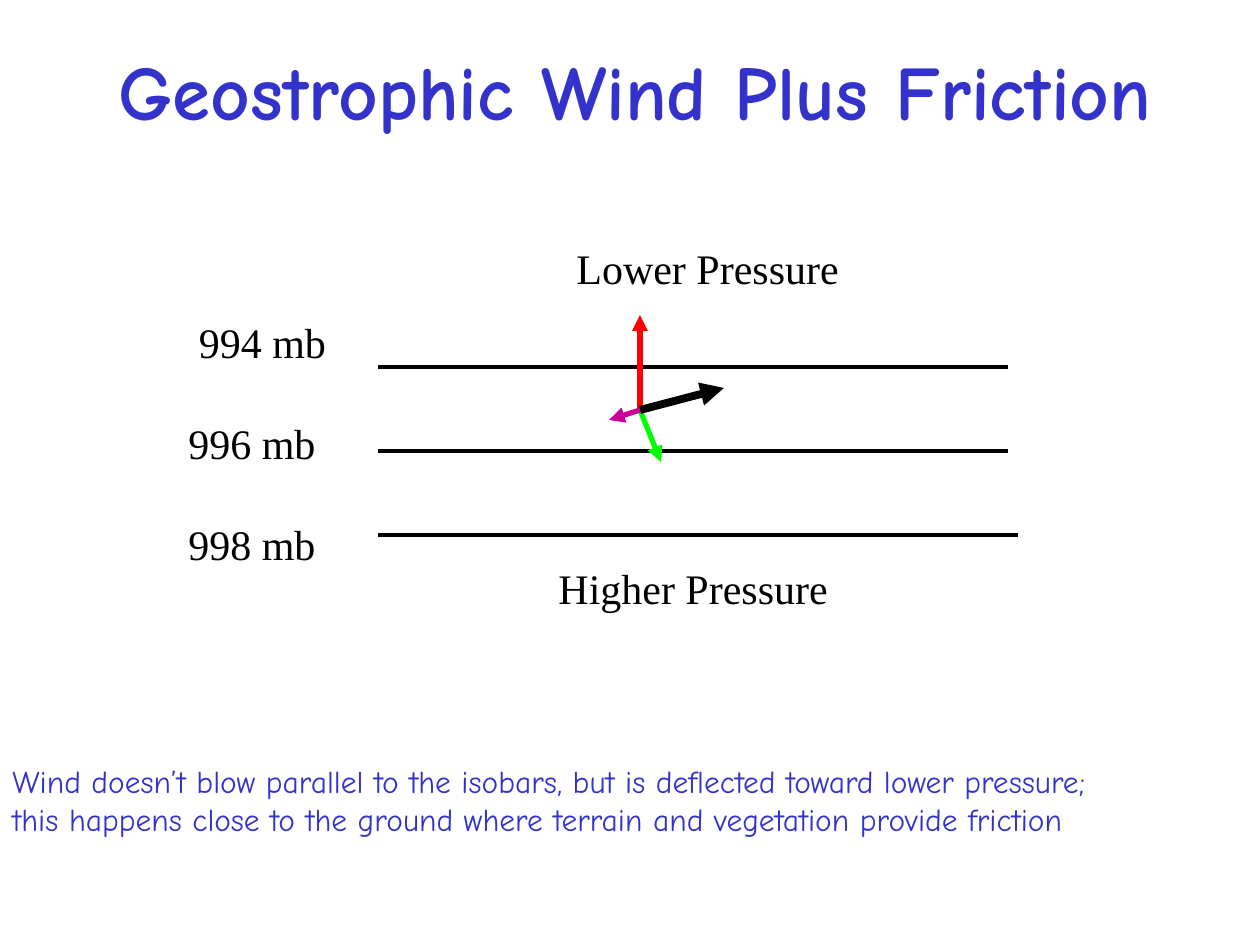
from dataclasses import dataclass

import lxml.etree
import pptx
import pptx.dml.color
import pptx.enum.shapes
import pptx.enum.text
import pptx.oxml.ns
import pptx.slide
import pptx.util

PX_PER_INCH = 126
EMU_PER_PX = 914400 / PX_PER_INCH

BLACK = pptx.dml.color.RGBColor(0x00, 0x00, 0x00)
BLUE = pptx.dml.color.RGBColor(0x33, 0x33, 0xCC)
RED = pptx.dml.color.RGBColor(0xFF, 0x00, 0x00)
GREEN = pptx.dml.color.RGBColor(0x00, 0xFF, 0x00)
PURPLE = pptx.dml.color.RGBColor(0xCC, 0x00, 0x99)

HEADING_FONT = "Comic Neue"
LABEL_FONT = "Times New Roman"
LEFT = pptx.enum.text.PP_ALIGN.LEFT
CENTER = pptx.enum.text.PP_ALIGN.CENTER
TOP = pptx.enum.text.MSO_ANCHOR.TOP
MIDDLE = pptx.enum.text.MSO_ANCHOR.MIDDLE
FIXED = pptx.enum.text.MSO_AUTO_SIZE.NONE
GROW = pptx.enum.text.MSO_AUTO_SIZE.SHAPE_TO_FIT_TEXT


@dataclass(frozen=True)
class Label:
    lines: tuple[str, ...]
    box: tuple[int, int, int, int]
    font: str = LABEL_FONT
    size: int = 24
    color: pptx.dml.color.RGBColor = BLACK
    bold: bool = False
    align: pptx.enum.text.PP_ALIGN = LEFT
    anchor: pptx.enum.text.MSO_ANCHOR = TOP
    wrap: bool = False
    fit: pptx.enum.text.MSO_AUTO_SIZE = GROW
    gap: int = 0


@dataclass(frozen=True)
class Stroke:
    start: tuple[int, int]
    end: tuple[int, int]
    color: pptx.dml.color.RGBColor = BLACK
    width: float = 2.25
    arrow: bool = False


def px(length: int) -> pptx.util.Emu:
    return pptx.util.Emu(round(length * EMU_PER_PX))


def apply(target: object, values: dict[str, object]) -> None:
    for name, value in values.items():
        setattr(target, name, value)


def draw_label(slide: pptx.slide.Slide, label: Label) -> None:
    frame = slide.shapes.add_textbox(*map(px, label.box)).text_frame
    apply(frame, {"word_wrap": label.wrap, "auto_size": label.fit, "vertical_anchor": label.anchor})
    for index, line in enumerate(label.lines):
        paragraph = frame.add_paragraph() if index else frame.paragraphs[0]
        paragraph.alignment = label.align
        if index:
            paragraph.space_before = pptx.util.Pt(label.gap)
        run = paragraph.add_run()
        run.text = line
        apply(run.font, {"name": label.font, "size": pptx.util.Pt(label.size), "bold": label.bold})
        run.font.color.rgb = label.color


def draw_stroke(slide: pptx.slide.Slide, stroke: Stroke) -> None:
    connector = slide.shapes.add_connector(
        pptx.enum.shapes.MSO_CONNECTOR.STRAIGHT, *map(px, stroke.start + stroke.end)
    )
    connector.line.color.rgb = stroke.color
    connector.line.width = pptx.util.Pt(stroke.width)
    properties = connector.element.spPr
    if stroke.arrow:
        outline = properties.find(pptx.oxml.ns.qn("a:ln"))
        lxml.etree.SubElement(outline, pptx.oxml.ns.qn("a:tailEnd"), type="triangle")
    lxml.etree.SubElement(properties, pptx.oxml.ns.qn("a:effectLst"))


ISOBAR_LEFT = 378
ISOBAR_TOP = 367
ISOBAR_GAP = 84
ISOBAR_RIGHTS = (1008, 1008, 1018)
AIR_PARCEL = (640, 410)

TITLE = Label(
    ("Geostrophic Wind Plus Friction",), (42, 11, 1187, 158), HEADING_FONT, 44, BLUE,
    bold=True, align=CENTER, anchor=MIDDLE, wrap=True, fit=FIXED,
)
PRESSURES = Label((" 994 mb", "996 mb", "998 mb"), (176, 310, 163, 265), gap=29)
LOWER_PRESSURE = Label(("Lower Pressure",), (564, 236, 290, 63))
HIGHER_PRESSURE = Label(("Higher Pressure",), (546, 556, 296, 63))
EXPLANATION = Label(
    (
        "Wind doesn’t blow parallel to the isobars, but is deflected toward lower pressure;",
        "this happens close to the ground where terrain and vegetation provide friction",
    ),
    (0, 756, 1255, 89), HEADING_FONT, 18, BLUE, wrap=True,
)

ISOBARS = tuple(
    Stroke((ISOBAR_LEFT, ISOBAR_TOP + row * ISOBAR_GAP), (right, ISOBAR_TOP + row * ISOBAR_GAP))
    for row, right in enumerate(ISOBAR_RIGHTS)
)
PRESSURE_GRADIENT = Stroke(AIR_PARCEL, (640, 315), RED, 3, True)
CORIOLIS = Stroke(AIR_PARCEL, (661, 462), GREEN, 3, True)
WIND = Stroke(AIR_PARCEL, (724, 388), BLACK, 4.5, True)
FRICTION = Stroke(AIR_PARCEL, (609, 420), PURPLE, 3, True)


def main() -> None:
    deck = pptx.Presentation()
    apply(deck, {"slide_width": px(1260), "slide_height": px(945)})
    slide = deck.slides.add_slide(deck.slide_layouts[6])
    draw_label(slide, TITLE)
    for isobar in ISOBARS:
        draw_stroke(slide, isobar)
    for label in (PRESSURES, LOWER_PRESSURE, HIGHER_PRESSURE):
        draw_label(slide, label)
    for force in (PRESSURE_GRADIENT, CORIOLIS, WIND):
        draw_stroke(slide, force)
    draw_label(slide, EXPLANATION)
    draw_stroke(slide, FRICTION)
    deck.save("out.pptx")


if __name__ == "__main__":
    main()
